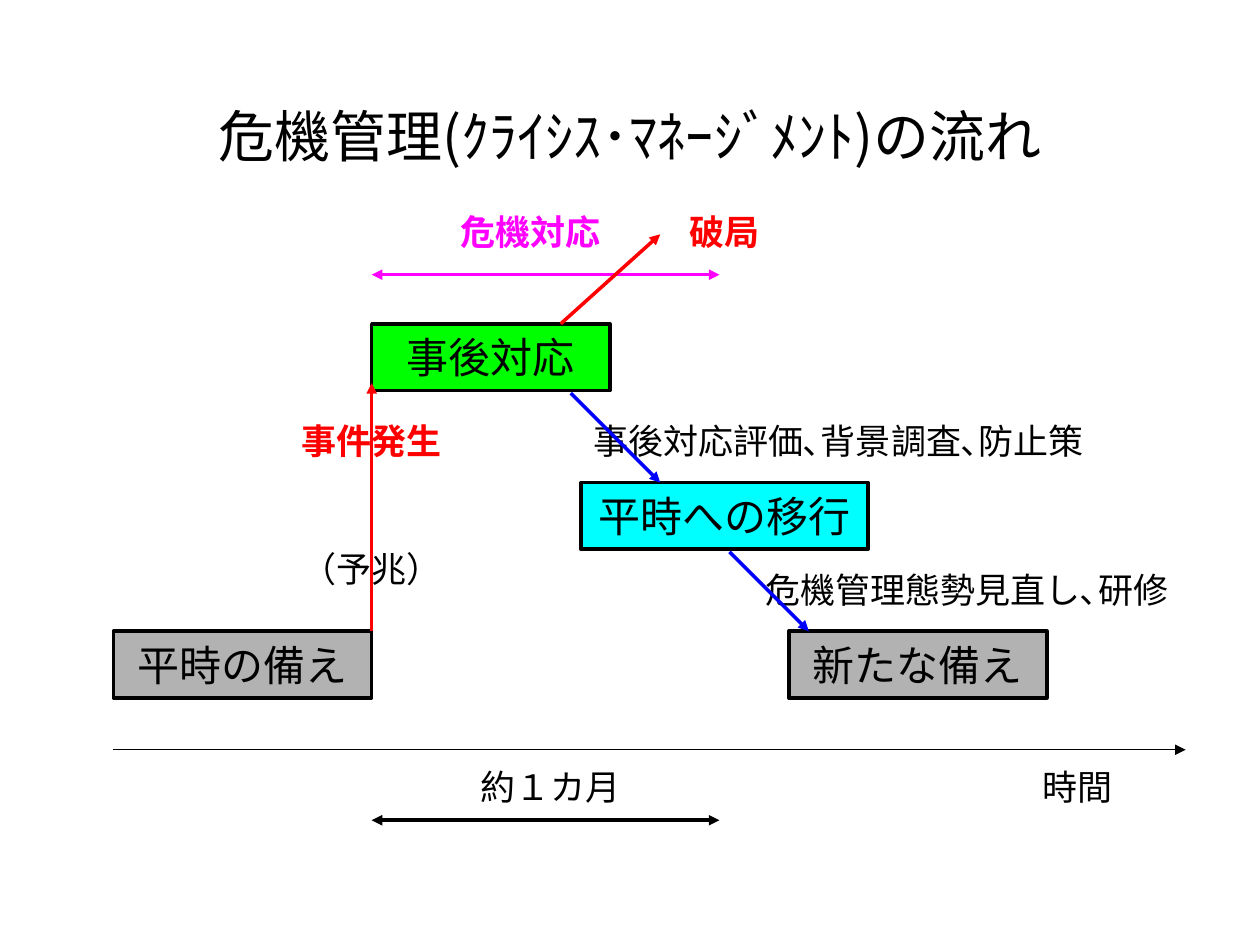
import dataclasses

import pptx
import pptx.dml.color
import pptx.enum.shapes
import pptx.enum.text
import pptx.oxml.ns
import pptx.util
from lxml import etree

PX = 9144  # EMU per px, 100 px to the inch


@dataclasses.dataclass(frozen=True)
class Theme:
    black: str = "000000"
    red: str = "FF0000"
    blue: str = "0000FF"
    magenta: str = "FF00FF"
    gray: str = "B2B2B2"
    green: str = "00FF00"
    cyan: str = "00FFFF"
    latin_font: str = "Arial"
    asian_font: str = "Noto Sans CJK JP"
    title_size: int = 32
    box_size: int = 24
    label_size: int = 20
    thick: float = 2
    thin: float = 0.75


THEME = Theme()
BOX_HEIGHT = 53
LABEL_HEIGHT = 43


def px(*lengths):
    return [pptx.util.Emu(length * PX) for length in lengths]


def rgb(color):
    return pptx.dml.color.RGBColor.from_string(color)


def write_text(shape, text, size, color=THEME.black, bold=False, font=THEME.latin_font):
    """Put one centred run into a shape."""
    frame = shape.text_frame
    frame.word_wrap = True
    frame.auto_size = pptx.enum.text.MSO_AUTO_SIZE.NONE
    frame.vertical_anchor = pptx.enum.text.MSO_ANCHOR.MIDDLE
    frame.margin_left = frame.margin_right = frame.margin_top = frame.margin_bottom = 0
    paragraph = frame.paragraphs[0]
    paragraph.alignment = pptx.enum.text.PP_ALIGN.CENTER
    run = paragraph.add_run()
    run.text = text
    run.font.name = font
    run.font.size = pptx.util.Pt(size)
    run.font.bold = bold
    run.font.color.rgb = rgb(color)
    # East Asian typeface follows the Latin one
    asian = etree.Element(pptx.oxml.ns.qn("a:ea"), typeface=THEME.asian_font)
    run.font._element.find(pptx.oxml.ns.qn("a:latin")).addnext(asian)


def set_title(slide, text):
    title = slide.shapes.title
    title.left, title.top, title.width, title.height = px(114, 76, 772, 63)
    write_text(title, text, THEME.title_size, font=THEME.asian_font)


def add_box(slide, text, left, top, width, fill):
    shape = slide.shapes.add_shape(
        pptx.enum.shapes.MSO_SHAPE.RECTANGLE, *px(left, top, width, BOX_HEIGHT))
    shape.shadow.inherit = False
    shape.fill.solid()
    shape.fill.fore_color.rgb = rgb(fill)
    shape.line.color.rgb = rgb(THEME.black)
    shape.line.width = pptx.util.Pt(THEME.thick)
    write_text(shape, text, THEME.box_size)


def add_label(slide, text, left, top, width=142, color=THEME.black, bold=False):
    shape = slide.shapes.add_textbox(*px(left, top, width, LABEL_HEIGHT))
    write_text(shape, text, THEME.label_size, color, bold)


def add_arrow(slide, start, end, color, width=THEME.thick, both_ends=False):
    connector = slide.shapes.add_connector(
        pptx.enum.shapes.MSO_CONNECTOR.STRAIGHT, *px(*start, *end))
    connector.line.color.rgb = rgb(color)
    connector.line.width = pptx.util.Pt(width)
    line = connector.line._get_or_add_ln()
    for tag in ("a:headEnd", "a:tailEnd") if both_ends else ("a:tailEnd",):
        etree.SubElement(line, pptx.oxml.ns.qn(tag), type="triangle")
    etree.SubElement(connector._element.spPr, pptx.oxml.ns.qn("a:effectLst"))


def main():
    presentation = pptx.Presentation()
    presentation.slide_width, presentation.slide_height = px(1000, 750)
    slide = presentation.slides.add_slide(presentation.slide_layouts[5])
    set_title(slide, "危機管理(ｸﾗｲｼｽ･ﾏﾈｰｼﾞﾒﾝﾄ)の流れ")

    # Stages
    add_box(slide, "平時の備え", 90, 501, 205, THEME.gray)
    add_box(slide, "新たな備え", 626, 501, 205, THEME.gray)
    add_box(slide, "事後対応", 295, 257, 189, THEME.green)
    add_box(slide, "平時への移行", 461, 383, 228, THEME.cyan)

    # Outbreak of the incident
    add_label(slide, "（予兆）", 224, 430)
    add_arrow(slide, (295, 501), (295, 304), THEME.red)
    add_label(slide, "事件発生", 224, 328, color=THEME.red, bold=True)

    # Return to normal
    add_label(slide, "事後対応評価､背景調査､防止策", 453, 328, 425)
    add_label(slide, "危機管理態勢見直し､研修", 594, 446, 347)
    add_arrow(slide, (453, 312), (524, 383), THEME.blue)
    add_arrow(slide, (579, 438), (642, 501), THEME.blue)

    # Time axis and the two spans of the response
    add_arrow(slide, (90, 595), (941, 595), THEME.black, THEME.thin)
    add_label(slide, "時間", 784, 603)
    for y, color in ((218, THEME.magenta), (651, THEME.black)):
        add_arrow(slide, (295, y), (571, y), color, both_ends=True)
    add_label(slide, "危機対応", 350, 162, color=THEME.magenta, bold=True)
    add_label(slide, "約１カ月", 366, 603)

    # Catastrophe
    add_arrow(slide, (445, 257), (524, 186), THEME.red)
    add_label(slide, "破局", 524, 162, 102, THEME.red, True)

    presentation.save("out.pptx")


if __name__ == "__main__":
    main()
